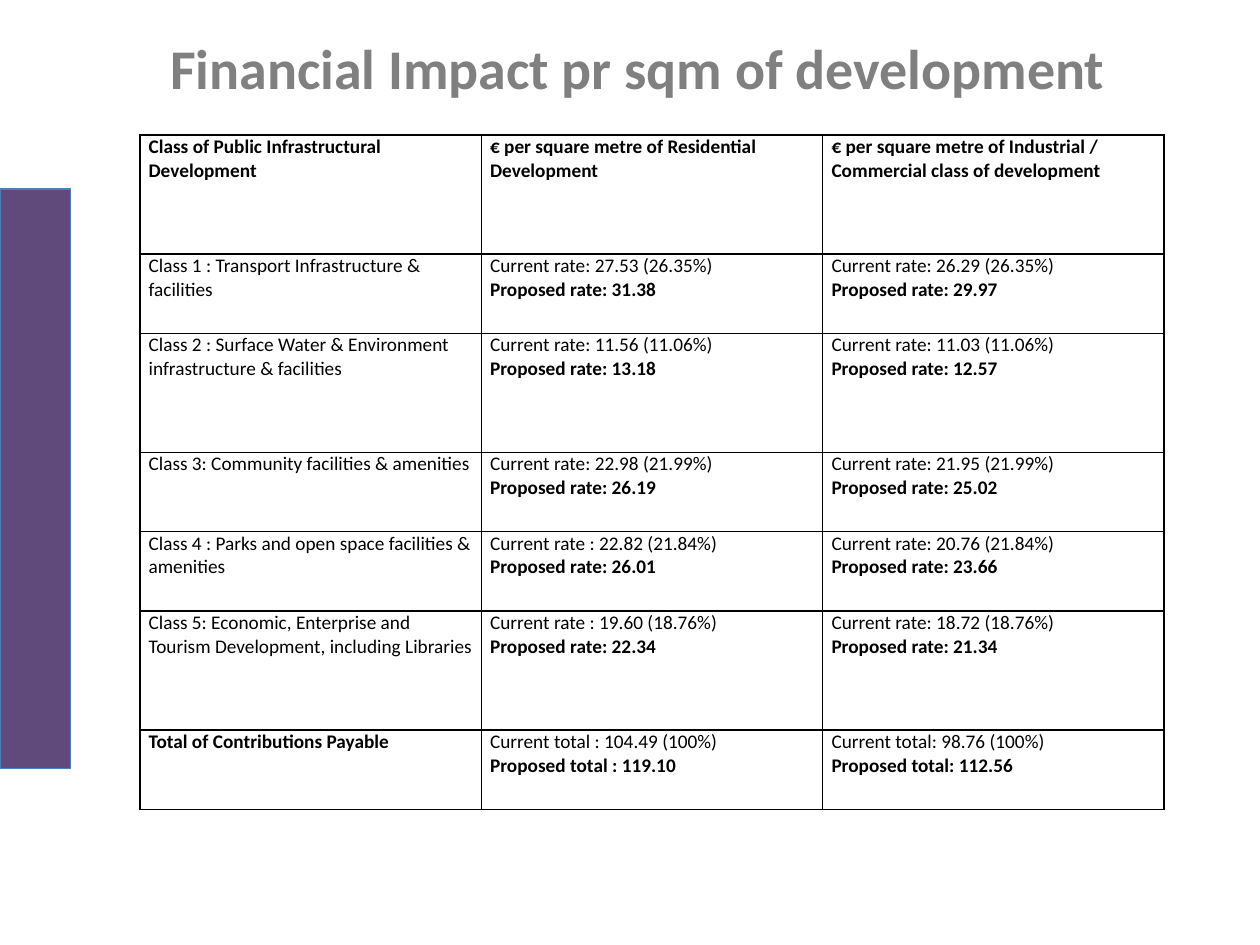
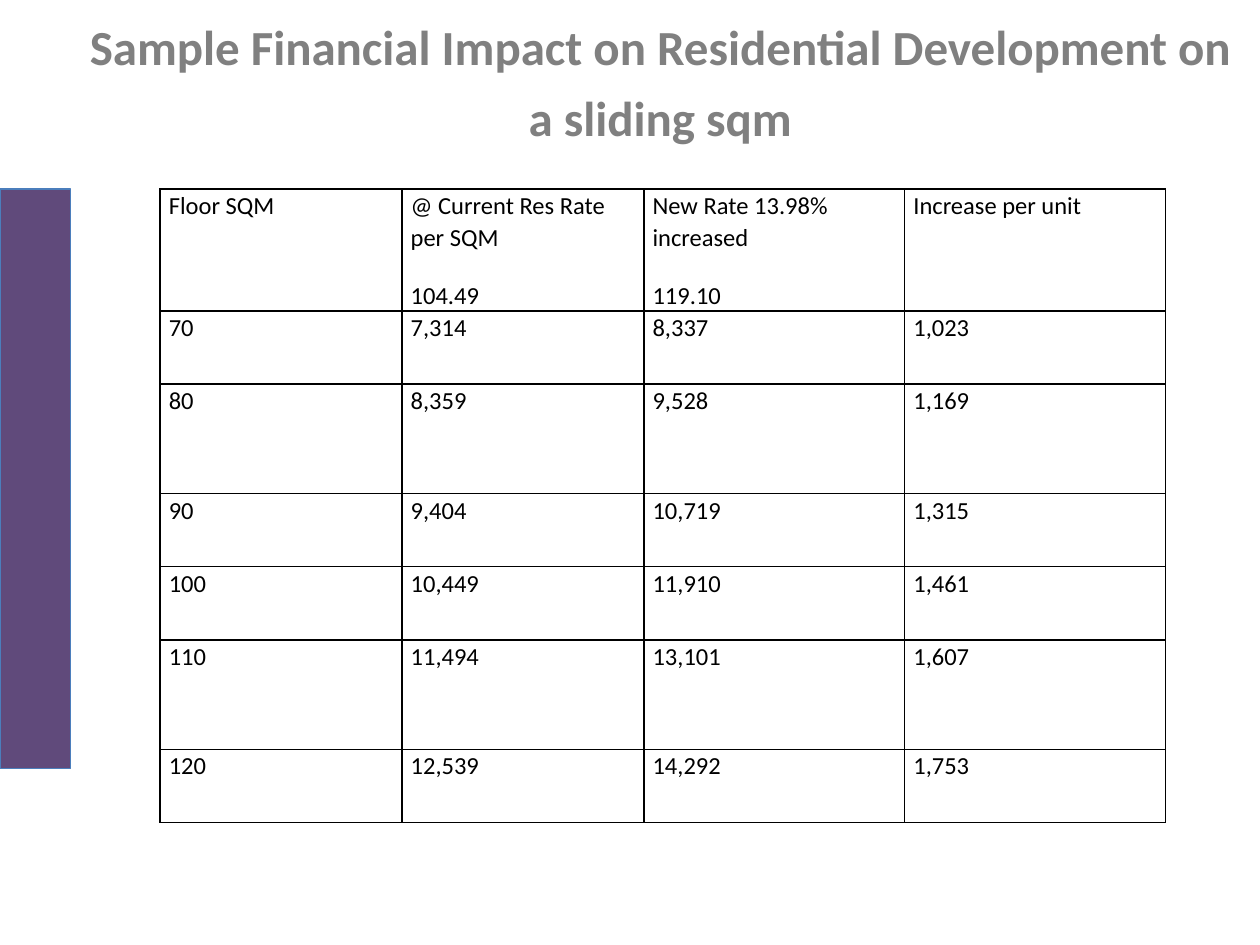
import pptx
import pptx.dml.color
import pptx.enum.shapes
import pptx.enum.text
import pptx.oxml
import pptx.oxml.ns
import pptx.util
from pptx.util import Inches

RGBColor = pptx.dml.color.RGBColor
ALIGN = pptx.enum.text.PP_ALIGN
ANCHOR = pptx.enum.text.MSO_ANCHOR

FONT = "Calibri"
GREY = RGBColor(0x80, 0x80, 0x80)
PURPLE = RGBColor(0x60, 0x4A, 0x7B)
BLUE = RGBColor(0x4B, 0x7E, 0xBC)
BLACK = RGBColor(0, 0, 0)

BAND_BOX = (0, 1.5, 0.56, 4.6)
TALL_ROWS = (0, 2, 5)
TALL_FACTOR = 1.5

RATES = [
    ("Class of Public Infrastructural Development",
     "€ per square metre of Residential Development",
     "€ per square metre of Industrial / Commercial class of development"),
    ("Class 1 : Transport Infrastructure & facilities",
     "Current rate: 27.53 (26.35%)\nProposed rate: 31.38",
     "Current rate: 26.29 (26.35%)\nProposed rate: 29.97"),
    ("Class 2 : Surface Water & Environment infrastructure & facilities",
     "Current rate: 11.56 (11.06%)\nProposed rate: 13.18",
     "Current rate: 11.03 (11.06%)\nProposed rate: 12.57"),
    ("Class 3: Community facilities & amenities",
     "Current rate: 22.98 (21.99%)\nProposed rate: 26.19",
     "Current rate: 21.95 (21.99%)\nProposed rate: 25.02"),
    ("Class 4 : Parks and open space facilities & amenities",
     "Current rate : 22.82 (21.84%)\nProposed rate: 26.01",
     "Current rate: 20.76 (21.84%)\nProposed rate: 23.66"),
    ("Class 5: Economic, Enterprise and Tourism Development, including Libraries",
     "Current rate : 19.60 (18.76%)\nProposed rate: 22.34",
     "Current rate: 18.72 (18.76%)\nProposed rate: 21.34"),
    ("Total of Contributions Payable",
     "Current total : 104.49 (100%)\nProposed total : 119.10",
     "Current total: 98.76 (100%)\nProposed total: 112.56"),
]

SAMPLES = [
    ("Floor SQM", "@ Current Res Rate per SQM\n104.49",
     "New Rate 13.98% increased\n119.10", "Increase per unit"),
    ("70", "7,314", "8,337", "1,023"),
    ("80", "8,359", "9,528", "1,169"),
    ("90", "9,404", "10,719", "1,315"),
    ("100", "10,449", "11,910", "1,461"),
    ("110", "11,494", "13,101", "1,607"),
    ("120", "12,539", "14,292", "1,753"),
]


def style_runs(para, size, color, bold):
    for span in para.runs:
        span.font.name = FONT
        span.font.size = pptx.util.Pt(size)
        span.font.color.rgb = color
        span.font.bold = bold


def place(shape, box):
    shape.left, shape.top, shape.width, shape.height = map(Inches, box)


def add_page(deck, title, box, size):
    """Add a page with its heading and the side band; return page and heading."""
    page = deck.slides.add_slide(deck.slide_layouts[5])
    heading = page.shapes.title
    place(heading, box)
    frame = heading.text_frame
    frame.text = title
    frame.word_wrap = True
    frame.auto_size = pptx.enum.text.MSO_AUTO_SIZE.NONE
    frame.vertical_anchor = ANCHOR.MIDDLE
    para = frame.paragraphs[0]
    para.alignment = ALIGN.CENTER
    para.line_spacing = 1.2
    para.space_before = pptx.util.Pt(6)
    style_runs(para, size, GREY, True)

    band = page.shapes.add_shape(pptx.enum.shapes.MSO_SHAPE.RECTANGLE,
                                 *map(Inches, BAND_BOX))
    band.shadow.inherit = False
    band.fill.solid()
    band.fill.fore_color.rgb = PURPLE
    band.line.color.rgb = BLUE
    band.line.width = pptx.util.Pt(0.75)
    return page, heading


def add_borders(cell):
    properties = cell._tc.get_or_add_tcPr()
    for index, side in enumerate(("lnL", "lnR", "lnT", "lnB")):
        border = pptx.oxml.parse_xml(
            f'<a:{side} {pptx.oxml.ns.nsdecls("a")} w="{pptx.util.Pt(1)}">'
            f'<a:solidFill><a:srgbClr val="{BLACK}"/></a:solidFill></a:{side}>')
        properties.insert(index, border)


def add_grid(page, left, top, widths, row_height, rows, size):
    """Draw a bordered table and return it."""
    heights = [row_height * (TALL_FACTOR if index in TALL_ROWS else 1)
               for index in range(len(rows))]
    box = (left, top, sum(widths), sum(heights))
    grid = page.shapes.add_table(len(rows), len(widths), *map(Inches, box)).table
    grid.first_row = grid.horz_banding = False
    for column, width in zip(grid.columns, widths):
        column.width = Inches(width)
    for row, height, texts in zip(grid.rows, heights, rows):
        row.height = Inches(height)
        for cell, text in zip(row.cells, texts):
            cell.text_frame.text = text
            cell.margin_left = cell.margin_right = Inches(0.07)
            cell.margin_top = cell.margin_bottom = 0
            cell.fill.background()
            add_borders(cell)
            for para in cell.text_frame.paragraphs:
                style_runs(para, size, BLACK, False)
    return grid


def build_rates_page(deck):
    page, heading = add_page(deck, "Financial Impact pr sqm of development",
                             (0.55, 0.13, 9.38, 1.37), 32)
    frame = heading.text_frame
    frame.vertical_anchor = ANCHOR.TOP
    frame.margin_left = Inches(0.8)
    frame.margin_top = Inches(0.03)
    frame.paragraphs[0].alignment = ALIGN.LEFT

    grid = add_grid(page, 1.11, 1.07, [2.71] * 3, 0.63, RATES, 11)
    for index, row in enumerate(grid.rows):
        for cell in row.cells:
            for para in cell.text_frame.paragraphs:
                if index == 0 or para.text.startswith(("Proposed", "Total")):
                    style_runs(para, 11, BLACK, True)


def build_samples_page(deck):
    page, _ = add_page(
        deck, "Sample Financial Impact on Residential Development on a sliding sqm",
        (0.55, 0.13, 9.38, 0.94), 28)
    grid = add_grid(page, 1.27, 1.5, [1.92, 1.92, 2.07, 2.07], 0.58, SAMPLES, 14)
    for cell in grid.iter_cells():
        for para in cell.text_frame.paragraphs:
            para.line_spacing = 1.07
            para.space_after = pptx.util.Pt(15)


def main():
    deck = pptx.Presentation()
    deck.slide_width = Inches(10)
    deck.slide_height = Inches(7.5)
    build_rates_page(deck)
    build_samples_page(deck)
    deck.save("out.pptx")


if __name__ == "__main__":
    main()
